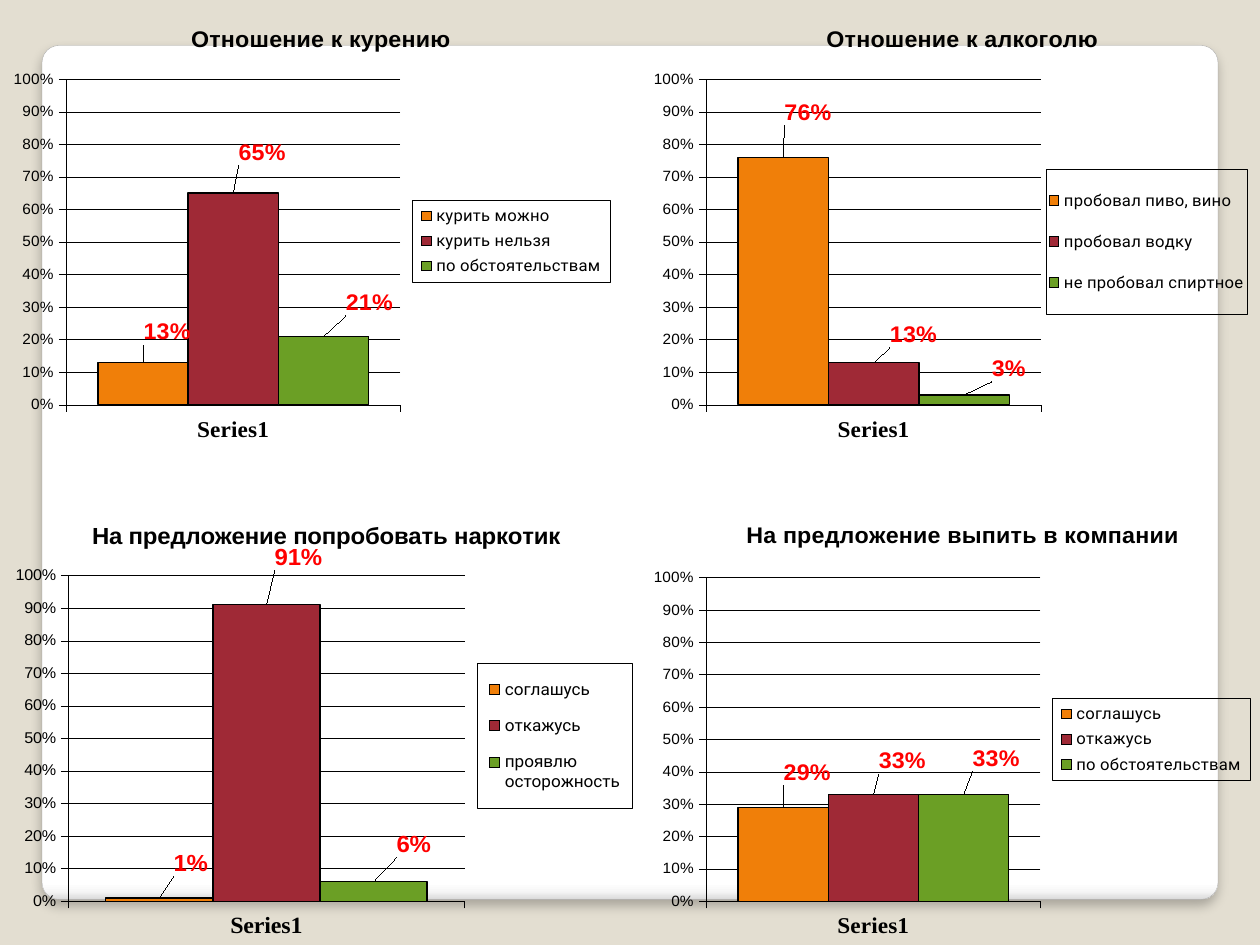
import lxml.etree
import pptx
import pptx.chart.data
import pptx.dml.color
import pptx.enum.chart
import pptx.enum.shapes
import pptx.oxml
import pptx.oxml.ns
import pptx.util

Pt = pptx.util.Pt
RGB = pptx.dml.color.RGBColor
qn = pptx.oxml.ns.qn
nsdecls = pptx.oxml.ns.nsdecls
parse_xml = pptx.oxml.parse_xml

BEIGE = RGB(0xE3, 0xDE, 0xD1)
GREY = RGB(0xA4, 0xA4, 0xA4)
BLACK = RGB(0, 0, 0)
RED = RGB(0xFF, 0, 0)
ORANGE = RGB(0xF0, 0x7F, 0x09)
MAROON = RGB(0x9F, 0x29, 0x36)
GREEN = RGB(0x6B, 0x9F, 0x25)

LEFT, RIGHT = 4.32, 370.08
TOP, BOTTOM = 4.32, 288
CHART_H = 248.4

# Per chart: title, title x, left, top, width, text sizes (main, axis, legend),
# plot box, legend box, series (name, value, label shift). Inner boxes are % of the chart.
SMALL, LARGE = (13.3, 8.8, 9.5), (13.7, 9.2, 9.8)
CHARTS = [
    ("Отношение к курению", 29.6, LEFT, TOP, 346.32, SMALL,
     (9.7, 17, 55.1, 77.3), (66.7, 45.8, 32.8, 19.3),
     [("курить можно", 0.13, (4, -3)),
      ("курить нельзя", 0.65, (4.8, -5.5)),
      ("по обстоятельствам", 0.21, (7.6, -3.7))]),
    ("На предложение попробовать наркотик", 12.8, LEFT, BOTTOM, 357.84, LARGE,
     (9.7, 17, 63.3, 77.3), (75, 37.7, 24.8, 34.5),
     [("соглашусь", 0.01, (5, -4)),
      ("откажусь", 0.91, (5.1, -7)),
      ("проявлю осторожность", 0.06, (6.4, -4.6))]),
    ("Отношение к алкоголю", 28.8, RIGHT, TOP, 346.32, SMALL,
     (9.7, 17, 55.2, 77.3), (65.7, 38.3, 33.2, 34.5),
     [("пробовал пиво, вино", 0.76, (4.1, -6.4)),
      ("пробовал водку", 0.13, (6.6, -2.3)),
      ("не пробовал спиртное", 0.03, (7.4, -2))]),
    ("На предложение выпить в компании", 15.6, RIGHT, BOTTOM, 346.32, SMALL,
     (9.7, 17.5, 55.1, 76.8), (66.7, 46.2, 32.8, 19.3),
     [("соглашусь", 0.29, (4, -4)),
      ("откажусь", 0.33, (4.8, -3.7)),
      ("по обстоятельствам", 0.33, (5.4, -4.4))]),
]


def set_font(font, name, size, color=BLACK, bold=False):
    font.name, font.size, font.bold = name, Pt(size), bold
    font.color.rgb = color


def set_line(line, width, color=BLACK):
    line.color.rgb = color
    line.width = Pt(width)


def set_layout(parent, index, box, mode="edge", inner=False):
    """Place a chart part at box, (x, y) or (x, y, w, h) in percent."""
    for old in parent.findall(qn("c:layout")):
        parent.remove(old)
    layout = parse_xml(f"<c:layout {nsdecls('c')}><c:manualLayout/></c:layout>")
    items = [("layoutTarget", "inner")] if inner else []
    if mode == "edge":
        items += [("xMode", "edge"), ("yMode", "edge")]
    items += [(k, str(round(v / 100, 4))) for k, v in zip("xywh", box)]
    for tag, val in items:
        lxml.etree.SubElement(layout[0], qn("c:" + tag)).set("val", val)
    parent.insert(index, layout)


class SlideBuilder:
    def __init__(self, slide):
        self.slide = slide
        self.colors = (ORANGE, MAROON, GREEN)
        self.hairline = 0.18

    def background(self, color):
        fill = self.slide.background.fill
        fill.solid()
        fill.fore_color.rgb = color

    def panel(self, x, y, w, h):
        sp = self.slide.shapes.add_shape(
            pptx.enum.shapes.MSO_SHAPE.ROUNDED_RECTANGLE, Pt(x), Pt(y), Pt(w), Pt(h))
        sp.adjustments[0] = 0.02
        set_line(sp.line, 0.16, GREY)
        stops = "".join(
            f'<a:gs pos="{pos * 1000}"><a:srgbClr val="{color}"/></a:gs>'
            for pos, color in ((0, "FFFFFF"), (98, "FFFFFF"), (99, "F7F7F7"), (100, "DADADA")))
        gradient = parse_xml(f"<a:gradFill {nsdecls('a')}><a:gsLst>{stops}</a:gsLst>"
                             '<a:lin ang="5400000" scaled="0"/></a:gradFill>')
        shadow = parse_xml(
            f"<a:effectLst {nsdecls('a')}><a:outerShdw blurRad=\"{Pt(6)}\" dist=\"{Pt(4)}\" "
            'dir="5400000" rotWithShape="0"><a:srgbClr val="000000"><a:alpha val="25000"/>'
            "</a:srgbClr></a:outerShdw></a:effectLst>")
        line = sp._element.spPr.find(qn("a:ln"))
        line.addprevious(gradient)
        line.addnext(shadow)

    def chart(self, title, title_x, x, y, w, sizes, plot_box, legend_box, series):
        main, small, key = sizes
        data = pptx.chart.data.CategoryChartData(number_format="0%")
        data.categories = ["Series1"]
        for name, value, _ in series:
            data.add_series(name, [value])
        chart = self.slide.shapes.add_chart(
            pptx.enum.chart.XL_CHART_TYPE.COLUMN_CLUSTERED,
            Pt(x), Pt(y), Pt(w), Pt(CHART_H), data).chart
        set_font(chart.font, "Times New Roman", main, bold=True)

        # Title
        p = chart.chart_title.text_frame.paragraphs[0]
        p.text = title
        set_font(p.runs[0].font, "Arial", main, bold=True)
        set_layout(chart.chart_title._element, 1, (title_x, 3))

        # Plot and bars
        plot = chart.plots[0]
        plot.gap_width, plot.overlap, plot.vary_by_categories = 70, 0, False
        set_layout(plot._element.getparent(), 0, plot_box, inner=True)
        for ser, color, (_, _, shift) in zip(plot.series, self.colors, series):
            self.bar(ser, color, shift, main)

        self.axes(chart, main, small)
        self.legend(chart, legend_box, key)

    def bar(self, ser, color, shift, size):
        ser.format.fill.solid()
        ser.format.fill.fore_color.rgb = color
        set_line(ser.format.line, 0.75)
        ser.data_labels.show_value = True
        label = ser.points[0].data_label
        for item in (ser.data_labels, label):
            set_font(item.font, "Arial", size, RED, True)
            item.position = pptx.enum.chart.XL_LABEL_POSITION.OUTSIDE_END
        set_layout(ser._element.find(".//" + qn("c:dLbl")), 1, shift, mode="shift")

    def axes(self, chart, main, small):
        cat, val = chart.category_axis, chart.value_axis
        for axis in (cat, val):
            axis.major_tick_mark = pptx.enum.chart.XL_TICK_MARK.OUTSIDE
            set_line(axis.format.line, self.hairline)
        cat.tick_label_position = pptx.enum.chart.XL_TICK_LABEL_POSITION.LOW
        set_font(cat.tick_labels.font, "Times New Roman", main, bold=True)
        set_font(val.tick_labels.font, "Arial", small)
        val.minimum_scale, val.maximum_scale, val.major_unit = 0, 1, 0.1
        val.tick_labels.number_format = "0%"
        val.tick_labels.number_format_is_linked = False
        set_line(val.major_gridlines.format.line, self.hairline)

    def legend(self, chart, box, size):
        chart.has_legend = True
        legend = chart.legend
        legend.position = pptx.enum.chart.XL_LEGEND_POSITION.RIGHT
        legend.include_in_layout = False
        set_font(legend.font, "Roboto", size)
        set_layout(legend._element, 1, box)
        border = parse_xml(
            f"<c:spPr {nsdecls('c', 'a')}><a:noFill/><a:ln w=\"{Pt(self.hairline)}\"><a:solidFill>"
            '<a:srgbClr val="000000"/></a:solidFill></a:ln></c:spPr>')
        legend._element.find(qn("c:txPr")).addprevious(border)


def main():
    prs = pptx.Presentation()
    prs.slide_width, prs.slide_height = Pt(720), Pt(540)
    s = SlideBuilder(prs.slides.add_slide(prs.slide_layouts[6]))
    s.background(BEIGE)
    s.panel(24, 26, 672, 488)
    for spec_row in CHARTS:
        s.chart(*spec_row)
    prs.save("out.pptx")


if __name__ == "__main__":
    main()
